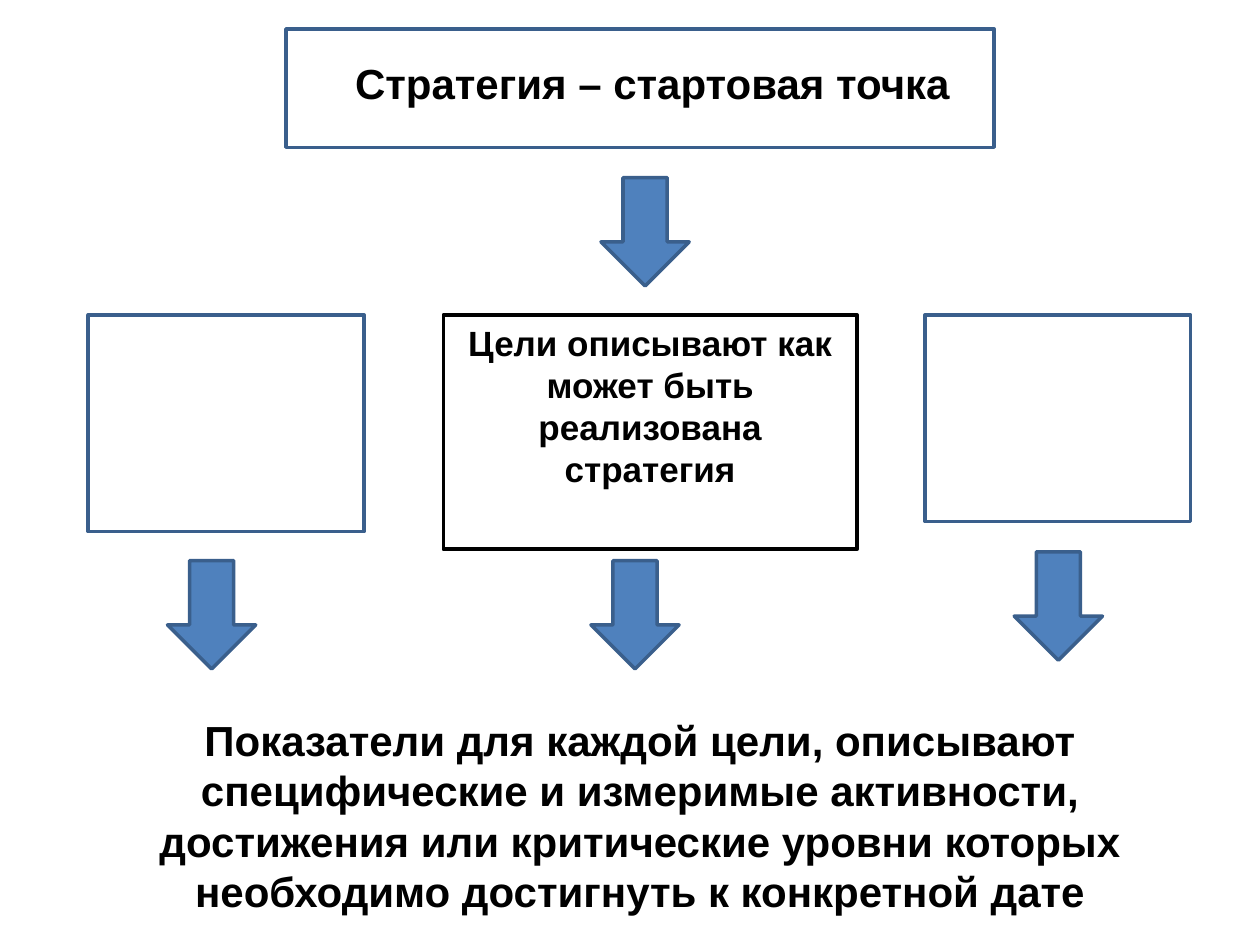
from pptx import Presentation
from pptx.dml.color import RGBColor
from pptx.enum.shapes import MSO_SHAPE
from pptx.enum.text import MSO_ANCHOR, PP_ALIGN
from pptx.util import Pt

PX = 9144
RECTANGLE, DOWN_ARROW = MSO_SHAPE.RECTANGLE, MSO_SHAPE.DOWN_ARROW
LEFT, CENTER = PP_ALIGN.LEFT, PP_ALIGN.CENTER
TOP = MSO_ANCHOR.TOP
COLORS = {"text": "000000", "outline": "3A5F8C", "arrow": "4F81BD"}


class StrategySlide:
    """Draws boxes, arrows and captions on one slide in a shared style."""

    def __init__(self, slide, font="Arial"):
        self.slide = slide
        self.font = font

    def color(self, name):
        return RGBColor.from_string(COLORS[name])

    def outlined(self, kind, bounds, outline, weight):
        shape = self.slide.shapes.add_shape(kind, *(n * PX for n in bounds))
        shape.shadow.inherit = False
        shape.fill.background()
        shape.line.color.rgb = self.color(outline)
        shape.line.width = Pt(weight)
        return shape

    def box(self, *bounds, outline="outline", weight=2):
        return self.outlined(RECTANGLE, bounds, outline, weight)

    def arrow(self, left, top):
        arrow = self.outlined(DOWN_ARROW, (left, top, 70, 86), "outline", 2)
        arrow.fill.solid()
        arrow.fill.fore_color.rgb = self.color("arrow")

    def set_text(self, shape, text, size, align):
        frame = shape.text_frame
        frame.word_wrap = True
        frame.vertical_anchor = TOP
        paragraph = frame.paragraphs[0]
        paragraph.text = text
        paragraph.alignment = align
        font = paragraph.font
        font.name, font.size, font.bold = self.font, Pt(size), True
        font.color.rgb = self.color("text")

    def caption(self, text, *bounds, size=24, align=CENTER):
        caption = self.slide.shapes.add_textbox(*(n * PX for n in bounds))
        self.set_text(caption, text, size, align)


def main():
    deck = Presentation()
    deck.slide_width, deck.slide_height = 1000 * PX, 750 * PX
    page = StrategySlide(deck.slides.add_slide(deck.slide_layouts[6]))

    page.caption("Стратегия – стартовая точка", 272, 41, 500, 50, align=LEFT)
    goals = page.box(352, 250, 328, 186, outline="text", weight=2.25)
    page.set_text(goals, "Цели описывают как может быть реализована стратегия",
                  20, CENTER)
    page.caption("Показатели для каждой цели, описывают специфические и "
                 "измеримые активности, достижения или критические уровни "
                 "которых необходимо достигнуть к конкретной дате",
                 83, 562, 850, 170)

    page.box(227, 23, 562, 94)
    page.box(70, 250, 219, 172)
    page.box(734, 250, 211, 164)

    for left, top in ((477, 141), (805, 438), (469, 445), (133, 445)):
        page.arrow(left, top)

    deck.save("out.pptx")


if __name__ == "__main__":
    main()
